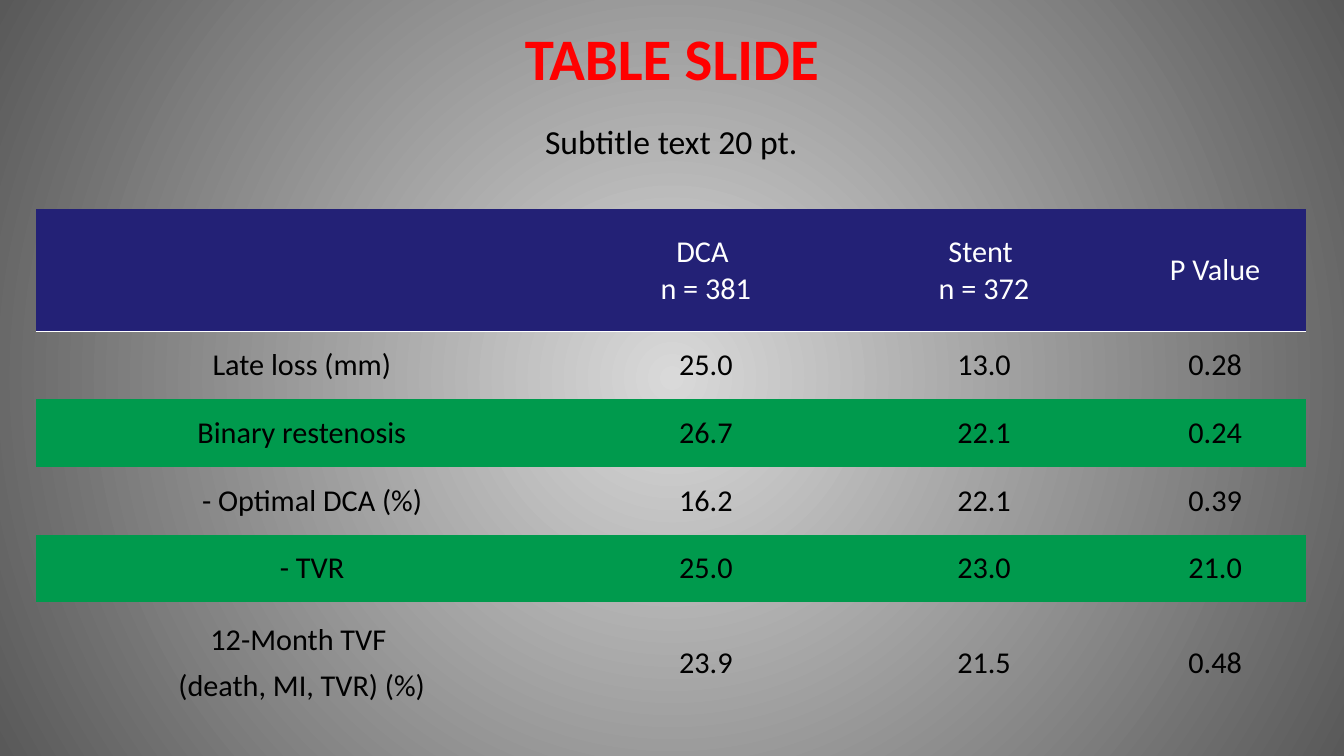
from pptx import Presentation
from pptx.dml.color import RGBColor
from pptx.enum.text import MSO_ANCHOR, PP_ALIGN
from pptx.oxml import parse_xml
from pptx.oxml.ns import nsdecls, qn
from pptx.util import Inches, Pt

CENTER = PP_ALIGN.CENTER
MIDDLE = MSO_ANCHOR.MIDDLE
TOP = MSO_ANCHOR.TOP

FONT = "Calibri"
COLORS = {
    "glow": "D9D9D9",
    "edge": "595959",
    "title": "FF0000",
    "text": "000000",
    "header": "232176",
    "header_text": "FFFFFF",
    "band": "009A4D",
    "rule": "FFFFFF",
}
NO_STYLE_NO_GRID = "{2D5ABB26-0587-4C30-8999-92F81FD0307C}"

COLUMN_WIDTHS = [4.39, 2.29, 2.31, 1.51]
ROW_HEIGHTS = [1.01, 0.56, 0.56, 0.56, 0.56, 1.01]
ROWS = [
    ["", "DCA \vn = 381", "Stent \vn = 372", "P Value"],
    ["Late loss (mm)", "25.0", "13.0", "0.28"],
    ["Binary restenosis", "26.7", "22.1", "0.24"],
    ["- Optimal DCA (%)", "16.2", "22.1", "0.39"],
    ["- TVR", "25.0", "23.0", "21.0"],
    ["12-Month TVF \n(death, MI, TVR) (%)", "23.9", "21.5", "0.48"],
]
SUBITEM_INDENT = 0.17


def set_radial_background(slide, center, edge):
    slide.element.cSld.insert(0, parse_xml(
        f'<p:bg {nsdecls("p", "a")}><p:bgPr><a:gradFill rotWithShape="1"><a:gsLst>'
        f'<a:gs pos="0"><a:srgbClr val="{center}"/></a:gs>'
        f'<a:gs pos="100000"><a:srgbClr val="{edge}"/></a:gs></a:gsLst>'
        '<a:path path="circle"><a:fillToRect l="50000" t="50000" r="50000" b="50000"/></a:path>'
        '</a:gradFill><a:effectLst/></p:bgPr></p:bg>'))


def format_paragraph(paragraph, size, color, bold=False):
    paragraph.alignment = CENTER
    font = paragraph.font
    font.name, font.size, font.bold = FONT, Pt(size), bold
    font.color.rgb = RGBColor.from_string(color)


def add_heading(slide, text, box, size, color, anchor, bold=False):
    shape = slide.shapes.add_textbox(*map(Inches, box))
    frame = shape.text_frame
    frame.word_wrap = True
    frame.vertical_anchor = anchor
    frame.margin_top = frame.margin_bottom = Inches(0.05)
    frame.text = text
    paragraph = frame.paragraphs[0]
    paragraph.line_spacing = 0.9
    format_paragraph(paragraph, size, color, bold)


def fill_cell(cell, text, color, fill):
    cell.vertical_anchor = MIDDLE
    indent = SUBITEM_INDENT if text.startswith("-") else 0
    cell.margin_left = Inches(0.11 + indent)
    cell.margin_right = Inches(0.11)
    cell.margin_top = cell.margin_bottom = Inches(0.06)
    if fill:
        cell.fill.solid()
        cell.fill.fore_color.rgb = RGBColor.from_string(fill)
    else:
        cell.fill.background()
    cell.text_frame.text = text
    for index, paragraph in enumerate(cell.text_frame.paragraphs):
        format_paragraph(paragraph, 18, color)
        if index:
            paragraph.space_before = Pt(5.4)


def add_bottom_rule(row_element, color):
    for properties in row_element.iter(qn("a:tcPr")):
        properties.insert(0, parse_xml(
            f'<a:lnB {nsdecls("a")} w="12700"><a:solidFill>'
            f'<a:srgbClr val="{color}"/></a:solidFill></a:lnB>'))


def add_results_table(slide, left, top):
    size = sum(COLUMN_WIDTHS), sum(ROW_HEIGHTS)
    shape = slide.shapes.add_table(len(ROWS), len(COLUMN_WIDTHS),
                                   *map(Inches, (left, top, *size)))
    shape.element.find(".//" + qn("a:tableStyleId")).text = NO_STYLE_NO_GRID
    table = shape.table
    table.horz_banding = False
    for column, width in zip(table.columns, COLUMN_WIDTHS):
        column.width = Inches(width)
    for index, (row, height, texts) in enumerate(zip(table.rows, ROW_HEIGHTS, ROWS)):
        row.height = Inches(height)
        color = COLORS["text"] if index else COLORS["header_text"]
        if index == 0:
            fill = COLORS["header"]
        else:
            fill = COLORS["band"] if index % 2 == 0 else None
        for cell, text in zip(row.cells, texts):
            fill_cell(cell, text, color, fill)
    add_bottom_rule(shape.element.find(".//" + qn("a:tr")), COLORS["rule"])


def main():
    presentation = Presentation()
    presentation.slide_width = Inches(11.11)
    presentation.slide_height = Inches(6.25)
    slide = presentation.slides.add_slide(presentation.slide_layouts[6])
    set_radial_background(slide, COLORS["glow"], COLORS["edge"])
    add_heading(slide, "TABLE SLIDE", (0, 0.21, 11.11, 0.59), 35,
                COLORS["title"], MIDDLE, bold=True)
    add_heading(slide, "Subtitle text 20 pt.", (0.3, 0.99, 10.5, 4.81), 20,
                COLORS["text"], TOP)
    add_results_table(slide, 0.3, 1.73)
    presentation.save("out.pptx")


if __name__ == "__main__":
    main()
